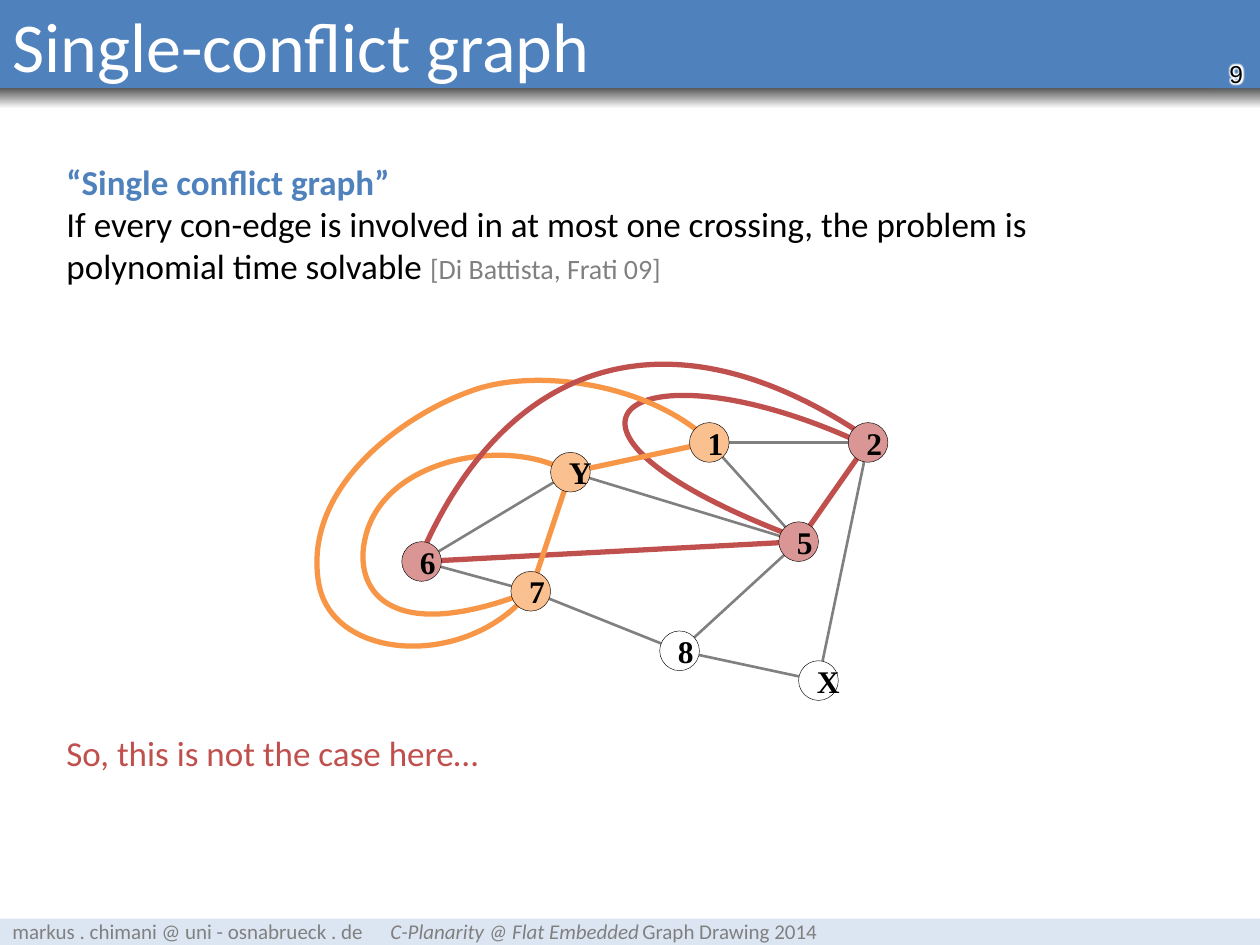
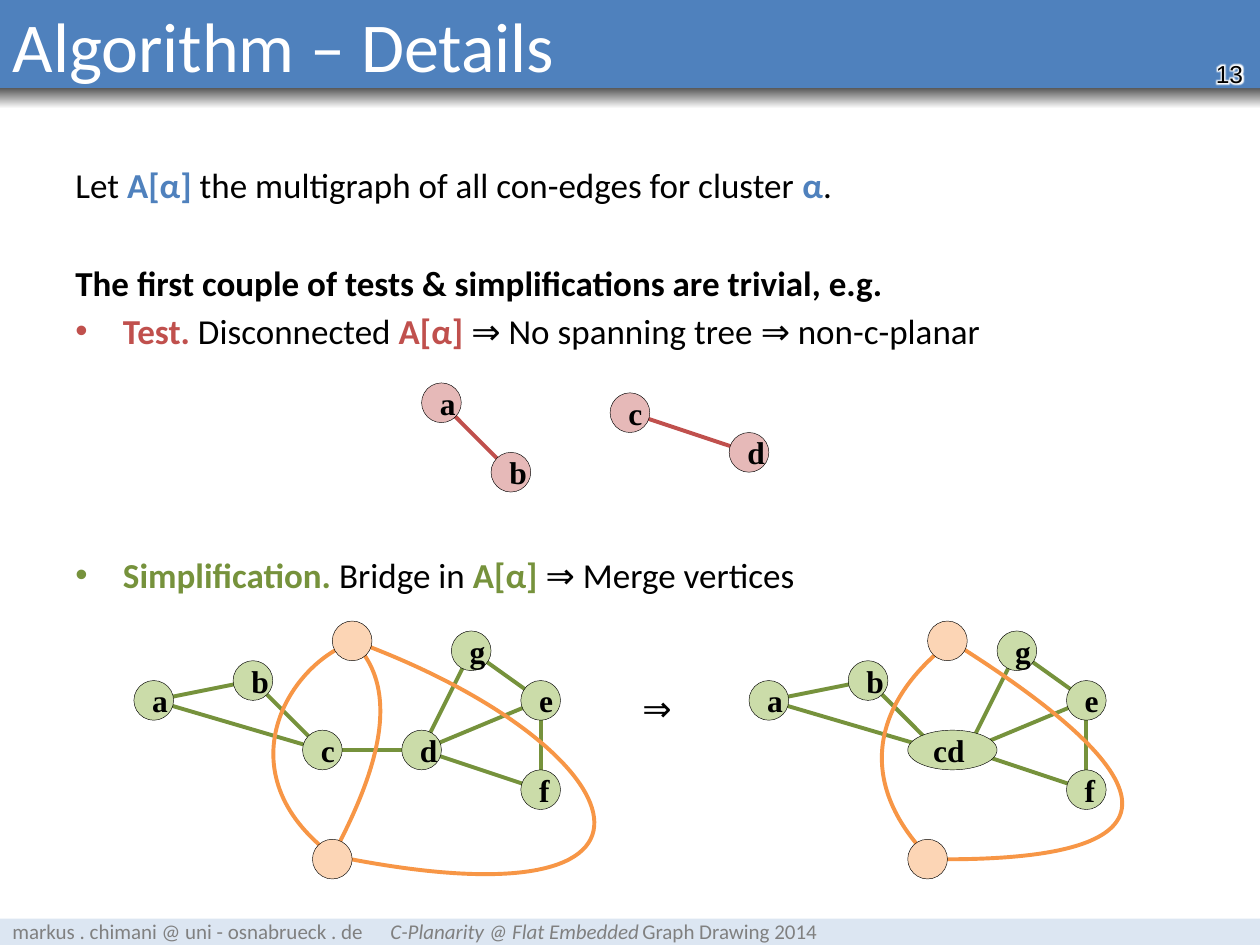
import dataclasses
from typing import Optional

import lxml.etree
import pptx
import pptx.dml.color
import pptx.enum.shapes
import pptx.enum.text
import pptx.oxml.ns
import pptx.util

Cm = pptx.util.Cm
Pt = pptx.util.Pt
qn = pptx.oxml.ns.qn
ANCHOR = pptx.enum.text.MSO_ANCHOR
ALIGN = pptx.enum.text.PP_ALIGN
SHAPE = pptx.enum.shapes.MSO_SHAPE
Point = tuple[float, float]


@dataclasses.dataclass(frozen=True)
class Theme:
    blue: str = "4F81BD"
    red: str = "C0504D"
    orange: str = "F79646"
    green: str = "76923C"
    gray: str = "808080"
    black: str = "000000"
    white: str = "FFFFFF"
    shade: str = "595959"
    footer: str = "DCE6F2"
    red_node: str = "D99694"
    pale_red_node: str = "E6B9B8"
    orange_node: str = "FAC090"
    pale_orange_node: str = "FCD5B5"
    green_node: str = "CBDCA9"
    text_font: str = "Calibri"
    number_font: str = "Arial"
    node_font: str = "Times New Roman"
    title_size: float = 40
    body_size: float = 20
    node_size: float = 18
    cite_size: float = 16
    number_size: float = 14
    footer_size: float = 12
    outline: float = 0.25
    thin: float = 1.5
    medium: float = 2.25
    thick: float = 3


THEME = Theme()
NODE_DIAMETER = 0.8
CURVE_STEPS = 40


@dataclasses.dataclass(frozen=True)
class Span:
    text: str
    color: str = THEME.black
    bold: bool = False
    italic: bool = False
    size: float = THEME.body_size
    font: str = THEME.text_font


@dataclasses.dataclass(frozen=True)
class Para:
    spans: list[Span]
    before: float = 0
    bullet: bool = False


@dataclasses.dataclass(frozen=True)
class Node:
    x: float
    y: float
    fill: str
    label: str = ""
    width: float = NODE_DIAMETER


@dataclasses.dataclass(frozen=True)
class EdgeSet:
    pairs: str
    color: str
    weight: float


@dataclasses.dataclass(frozen=True)
class Curve:
    points: list[Point]
    color: str
    weight: float


@dataclasses.dataclass(frozen=True)
class Graph:
    nodes: list[Node]
    edges: list[EdgeSet] = dataclasses.field(default_factory=list)
    curves: list[Curve] = dataclasses.field(default_factory=list)
    ports: dict[str, Point] = dataclasses.field(default_factory=dict)


def rgb(color: str) -> pptx.dml.color.RGBColor:
    return pptx.dml.color.RGBColor.from_string(color)


def format_span(run, span: Span) -> None:
    run.font.size = Pt(span.size)
    run.font.name = span.font
    run.font.bold = span.bold
    run.font.italic = span.italic
    run.font.color.rgb = rgb(span.color)


def write_spans(paragraph, spans: list[Span]) -> None:
    for span in spans:
        for index, line in enumerate(span.text.split("\v")):
            if index:
                paragraph.add_line_break()
            if line:
                run = paragraph.add_run()
                run.text = line
                format_span(run, span)


def add_bullet(paragraph) -> None:
    properties = paragraph._p.get_or_add_pPr()
    properties.set("marL", str(Cm(0.96)))
    properties.set("indent", str(Cm(-0.96)))
    lxml.etree.SubElement(properties, qn("a:buFont"), typeface="Arial")
    lxml.etree.SubElement(properties, qn("a:buChar"), char="•")


def draw_text(page, x: float, y: float, width: float, height: float,
              paras: list[Para], wrap: bool = True) -> None:
    box = page.shapes.add_textbox(Cm(x), Cm(y), Cm(width), Cm(height))
    frame = box.text_frame
    frame.word_wrap = wrap
    for index, para in enumerate(paras):
        paragraph = frame.add_paragraph() if index else frame.paragraphs[0]
        paragraph.space_before = Pt(para.before)
        if para.bullet:
            add_bullet(paragraph)
        write_spans(paragraph, para.spans)


def draw_band(page, x: float, y: float, width: float, height: float, color: Optional[str] = None):
    band = page.shapes.add_shape(SHAPE.RECTANGLE, Cm(x), Cm(y), Cm(width), Cm(height))
    band.shadow.inherit = False
    band.line.fill.background()
    if color:
        band.fill.solid()
        band.fill.fore_color.rgb = rgb(color)
    else:
        band.fill.gradient()
        band.fill.gradient_angle = 270
        for stop, shade in zip(band.fill.gradient_stops, (THEME.shade, THEME.white)):
            stop.color.rgb = rgb(shade)
    band.text_frame.vertical_anchor = ANCHOR.BOTTOM
    return band


def draw_number(page, number: int) -> None:
    frame = draw_band(page, 24.41, 0, 0.79, 1.78, THEME.blue).text_frame
    frame.margin_left = frame.margin_top = frame.margin_bottom = 0
    frame.margin_right = Cm(0.14)
    frame.text = str(number)
    frame.paragraphs[0].alignment = ALIGN.RIGHT
    run = frame.paragraphs[0].runs[0]
    format_span(run, Span("", size=THEME.number_size, font=THEME.number_font))
    effects = lxml.etree.Element(qn("a:effectLst"))
    glow = lxml.etree.SubElement(effects, qn("a:glow"), rad=str(Pt(5)))
    lxml.etree.SubElement(glow, qn("a:srgbClr"), val=THEME.white)
    run._r.rPr.find(qn("a:solidFill")).addnext(effects)


def draw_footer(page) -> None:
    paragraph = draw_band(page, 0, 18.52, 25.4, 0.64, THEME.footer).text_frame.paragraphs[0]
    paragraph.alignment = ALIGN.LEFT
    stops = lxml.etree.SubElement(paragraph._p.get_or_add_pPr(), qn("a:tabLst"))
    for position in (7.62, 12.7):
        lxml.etree.SubElement(stops, qn("a:tab"), pos=str(Cm(position)), algn="l")
    style = Span("", THEME.gray, size=THEME.footer_size)
    write_spans(paragraph, [
        dataclasses.replace(style, text="markus . chimani @ uni - osnabrueck . de\t"),
        dataclasses.replace(style, text="C-Planarity @ Flat Embedded", italic=True),
        dataclasses.replace(style, text="\tGraph Drawing 2014"),
    ])


def add_page(deck, title: str, number: int):
    page = deck.slides.add_slide(deck.slide_layouts[5])
    box = page.shapes.title
    box.left, box.top, box.width, box.height = Cm(0), Cm(0), Cm(24.41), Cm(1.78)
    box.fill.solid()
    box.fill.fore_color.rgb = rgb(THEME.blue)
    frame = box.text_frame
    frame.text = title
    frame.auto_size = pptx.enum.text.MSO_AUTO_SIZE.NONE
    frame.vertical_anchor = ANCHOR.MIDDLE
    frame.paragraphs[0].alignment = ALIGN.LEFT
    format_span(frame.paragraphs[0].runs[0], Span("", THEME.white, size=THEME.title_size))
    draw_band(page, 0, 1.78, 25.4, 0.41)
    draw_number(page, number)
    draw_band(page, 25.2, 0, 0.2, 1.78, THEME.blue)
    draw_footer(page)
    return page


def bezier(a: float, b: float, c: float, d: float, t: float) -> int:
    s = 1 - t
    return round(s**3 * a + 3 * s * s * t * b + 3 * s * t * t * c + t**3 * d)


def draw_curve(page, curve: Curve) -> None:
    points = [(Cm(x), Cm(y)) for x, y in curve.points]
    samples = []
    for start in range(0, len(points) - 1, 3):
        xs, ys = zip(*points[start:start + 4])
        for step in range(1, CURVE_STEPS + 1):
            t = step / CURVE_STEPS
            samples.append((bezier(*xs, t), bezier(*ys, t)))
    builder = page.shapes.build_freeform(*points[0])
    builder.add_line_segments(samples, close=False)
    shape = builder.convert_to_shape()
    shape.shadow.inherit = False
    shape.fill.background()
    shape.line.color.rgb = rgb(curve.color)
    shape.line.width = Pt(curve.weight)
    outline = shape._element.find(".//" + qn("a:path"))
    for segment in outline.findall(qn("a:lnTo")):
        outline.remove(segment)
    for index, (x, y) in enumerate(points[1:]):
        if index % 3 == 0:
            segment = lxml.etree.SubElement(outline, qn("a:cubicBezTo"))
        lxml.etree.SubElement(segment, qn("a:pt"), x=str(x - shape.left), y=str(y - shape.top))


def draw_edge(page, start: Point, end: Point, edges: EdgeSet) -> None:
    line = page.shapes.add_connector(pptx.enum.shapes.MSO_CONNECTOR.STRAIGHT,
                                     *(Cm(value) for value in start + end))
    line.line.color.rgb = rgb(edges.color)
    line.line.width = Pt(edges.weight)
    lxml.etree.SubElement(line._element.spPr, qn("a:effectLst"))


def draw_node(page, node: Node) -> None:
    shape = page.shapes.add_shape(
        SHAPE.OVAL, Cm(node.x - node.width / 2), Cm(node.y - NODE_DIAMETER / 2),
        Cm(node.width), Cm(NODE_DIAMETER))
    shape.shadow.inherit = False
    shape.fill.solid()
    shape.fill.fore_color.rgb = rgb(node.fill)
    shape.line.color.rgb = rgb(THEME.black)
    shape.line.width = Pt(THEME.outline)
    if node.label:
        shape.text_frame.text = node.label
        format_span(shape.text_frame.paragraphs[0].runs[0],
                    Span("", bold=True, size=THEME.node_size, font=THEME.node_font))


def draw_graph(page, graph: Graph) -> None:
    centres = {node.label: (node.x, node.y) for node in graph.nodes} | graph.ports
    for curve in graph.curves:
        draw_curve(page, curve)
    for edges in graph.edges:
        for start, end in edges.pairs.split():
            draw_edge(page, centres[start], centres[end], edges)
    for node in graph.nodes:
        draw_node(page, node)


def build_conflict_page(deck) -> None:
    page = add_page(deck, "Single-conflict graph", 9)
    draw_text(page, 1.09, 3.12, 22.81, 12.75, [
        Para([Span("“Single conflict graph”\v", THEME.blue, True),
              Span("If every con-edge is involved in at most one crossing, "
                   "the problem is polynomial time solvable "),
              Span("[Di Battista, Frati 09]", THEME.gray, size=THEME.cite_size)]),
        Para([Span("So, this is not the case here…", THEME.red)], before=254),
    ])
    red, orange = THEME.red_node, THEME.orange_node
    draw_graph(page, Graph(
        [Node(10.7, 11.92, orange, "7"), Node(14.3, 8.92, orange, "1"),
         Node(13.7, 13.12, THEME.white, "8"), Node(16.1, 10.92, red, "5"),
         Node(8.5, 11.32, red, "6"), Node(11.5, 9.52, orange, "Y"),
         Node(17.5, 8.92, red, "2"), Node(16.5, 13.72, THEME.white, "X")],
        [EdgeSet("56 25", THEME.red, THEME.thick),
         EdgeSet("1Y 7Y", THEME.orange, THEME.thick),
         EdgeSet("5Y 6Y 76 21 51 X2 X8 87 58", THEME.gray, THEME.thin)],
        [Curve([(17.45, 8.97), (12.75, 6.76), (10.01, 8.59), (16.15, 10.87)],
               THEME.red, THEME.thick),
         Curve([(11.46, 9.53), (10.36, 8.81), (7.77, 9.17), (7.37, 10.82),
                (7.11, 11.84), (7.77, 13.03), (10.59, 11.96)], THEME.orange, THEME.thick),
         Curve([(14.3, 8.89), (13.08, 7.72), (10.74, 7.39), (9.45, 7.9), (8.13, 8.38),
                (6.07, 9.83), (6.43, 11.79), (6.73, 13.34), (9.45, 13.49), (10.69, 11.91)],
               THEME.orange, THEME.thick),
         Curve([(17.58, 8.89), (13.39, 5.99), (10.08, 7.37), (8.43, 11.33)],
               THEME.red, THEME.thick)]))


def green_nodes(a_x: float, e_x: float) -> list[Node]:
    places = [("a", a_x, 14.12), ("b", a_x + 2, 13.72), ("e", e_x, 14.12),
              ("f", e_x, 15.92), ("g", e_x - 1.4, 13.12)]
    return [Node(x, y, THEME.green_node, label) for label, x, y in places]


def crossing_cluster(top_x: float, curves: list[list[Point]]) -> Graph:
    return Graph([Node(top_x, 12.92, THEME.pale_orange_node),
                  Node(top_x - 0.4, 17.32, THEME.pale_orange_node)],
                 curves=[Curve(points, THEME.orange, THEME.medium) for points in curves])


def build_algorithm_page(deck) -> None:
    page = add_page(deck, "Algorithm – Details", 13)
    draw_text(page, 1.27, 3.18, 22.43, 13.84, [
        Para([Span("Let "), Span("A[α]", THEME.blue, True),
              Span(" the multigraph of all con-edges for cluster "),
              Span("α", THEME.blue, True), Span(".")]),
        Para([Span("The first couple of tests & simplifications are trivial, e.g.", bold=True)],
             before=31.6),
        Para([Span("Test.", THEME.red, True), Span(" Disconnected "),
              Span("A[α] ", THEME.red, True),
              Span("⇒ No spanning tree ⇒ non-c-planar")], before=3.6, bullet=True),
        Para([Span("Simplification.", THEME.green, True), Span(" Bridge in "),
              Span("A[α] ", THEME.green, True),
              Span("⇒ Merge vertices")], before=115.6, bullet=True),
    ])
    pale, green = THEME.pale_red_node, THEME.green_node
    draw_graph(page, Graph(
        [Node(10.3, 9.52, pale, "b"), Node(15.1, 9.12, pale, "d"),
         Node(12.7, 8.32, pale, "c"), Node(8.9, 8.12, pale, "a")],
        [EdgeSet("ba cd", THEME.red, THEME.medium)]))
    bridge = EdgeSet("cb df dc de eg gd ef ca ba", THEME.green, THEME.medium)
    draw_graph(page, Graph(
        [Node(6.5, 15.12, green, "c"), Node(8.5, 15.12, green, "d")] + green_nodes(3.1, 10.9),
        [bridge]))
    draw_graph(page, Graph(
        [Node(19.2, 15.12, green, "cd", 1.8)] + green_nodes(15.5, 21.9), [bridge],
        ports={"c": (18.9, 15.12), "d": (19.5, 15.12)}))
    draw_text(page, 12.7, 13.72, 1.22, 1.12, [Para([Span("⇒")])], wrap=False)
    draw_graph(page, crossing_cluster(7.1, [
        [(6.68, 17.3), (7.44, 15.88), (8.2, 14.05), (7.16, 12.98)],
        [(6.71, 17.25), (14.38, 18.82), (12.93, 15.06), (7.16, 12.93)],
        [(6.71, 17.25), (4.45, 15.57), (5.84, 13.34), (7.16, 12.93)]]))
    draw_graph(page, crossing_cluster(19.1, [
        [(18.67, 17.32), (24.87, 17.42), (22.78, 15.19), (19.18, 12.93)],
        [(18.69, 17.25), (17.17, 15.65), (17.7, 14.05), (19.18, 12.93)]]))


def main() -> None:
    deck = pptx.Presentation()
    deck.slide_width, deck.slide_height = Cm(25.4), Cm(19.05)
    build_conflict_page(deck)
    build_algorithm_page(deck)
    deck.save("out.pptx")


if __name__ == "__main__":
    main()
